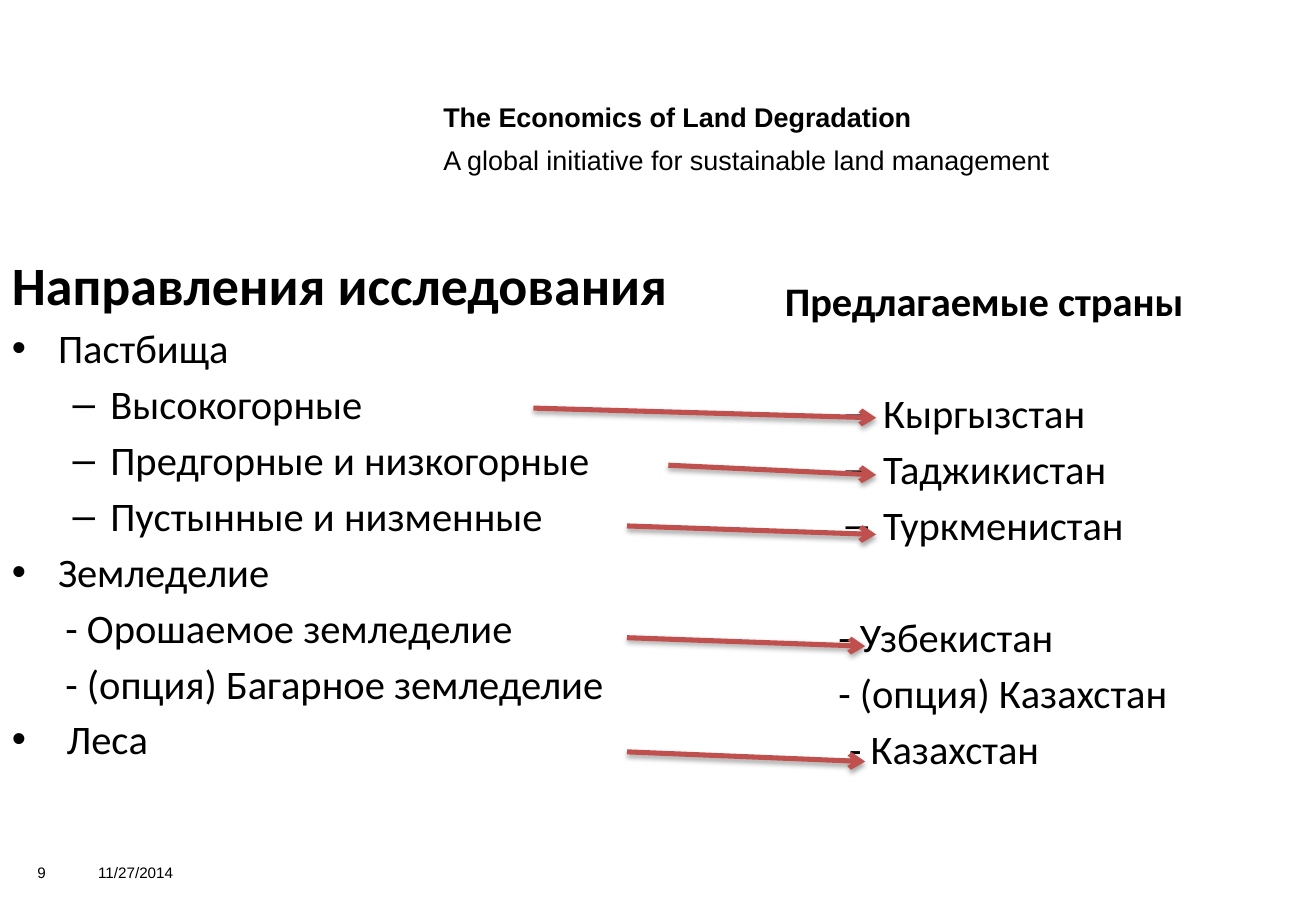
from dataclasses import dataclass

from lxml.etree import SubElement
from pptx import Presentation
from pptx.dml.color import RGBColor
from pptx.enum.shapes import MSO_CONNECTOR
from pptx.oxml.ns import qn
from pptx.slide import Slide
from pptx.util import Inches, Pt


@dataclass(frozen=True)
class Theme:
    text: RGBColor = RGBColor(0, 0, 0)
    arrow: RGBColor = RGBColor(0xC0, 0x50, 0x4D)
    shadow: str = "000000"
    body_font: str = "Calibri"
    frame_font: str = "Arial"
    title: float = 32
    body: float = 24
    header: float = 16
    footer: float = 9
    gap: float = 4.3
    skipped_line: float = 37.9
    arrow_width: float = 3


@dataclass(frozen=True)
class Line:
    text: str
    size: float
    font: str = "Calibri"
    bold: bool = False
    level: int = 0
    margin: float = 0
    indent: float = 0
    bullet: str = ""
    before: float = 0
    after: float = 0
    spacing: float = 1
    tab: float = 0


@dataclass(frozen=True)
class TextBlock:
    left: float
    top: float
    width: float
    height: float
    lines: tuple[Line, ...]


@dataclass(frozen=True)
class Arrow:
    left: float
    top: float
    right: float
    bottom: float


THEME = Theme()


def topic(text: str, margin: float = 0.38) -> Line:
    return Line(text, THEME.body, margin=margin, indent=-margin, bullet="•", before=THEME.gap)


def dashed(text: str, before: float = THEME.gap) -> Line:
    return Line(text, THEME.body, level=1, margin=0.81, indent=-0.31, bullet="–", before=before)


def option(text: str, before: float = THEME.gap, margin: float = 0.44) -> Line:
    return Line(text, THEME.body, level=2, margin=margin, before=before)


FOOTER = TextBlock(0.21, 7.06, 5.03, 0.25, (
    Line("9\t11/27/2014", THEME.footer, THEME.frame_font, tab=1),
))
HEADER = TextBlock(3.55, 0.78, 7.63, 0.72, (
    Line("The Economics of Land Degradation", THEME.header, THEME.frame_font, bold=True, after=6),
    Line("A global initiative for sustainable land management", THEME.header, THEME.frame_font, after=6),
))
DIRECTIONS = TextBlock(0, 2.02, 6.53, 4.63, (
    Line("Направления исследования", THEME.title, THEME.body_font, bold=True),
    topic("Пастбища"),
    dashed("Высокогорные"),
    dashed("Предгорные и низкогорные"),
    dashed("Пустынные и низменные"),
    topic("Земледелие"),
    option("- Орошаемое земледелие"),
    option("- (опция) Багарное земледелие"),
    topic("Леса", margin=0.45),
))
COUNTRIES = TextBlock(6.36, 2.02, 4.48, 4.63, (
    Line("Предлагаемые страны", THEME.body, THEME.body_font, bold=True, spacing=1.5),
    dashed("Кыргызстан", before=THEME.skipped_line),
    dashed("Таджикистан"),
    dashed("Туркменистан"),
    option("- Узбекистан", before=THEME.skipped_line),
    option("- (опция) Казахстан"),
    option("- Казахстан", margin=0.53),
))
ARROWS = (
    Arrow(4.39, 3.36, 7.21, 3.44),
    Arrow(5.5, 3.83, 7.21, 3.91),
    Arrow(5.16, 4.33, 7.21, 4.4),
    Arrow(5.16, 5.25, 7.12, 5.32),
    Arrow(5.16, 6.19, 7.12, 6.27),
)


def draw_text(page: Slide, block: TextBlock) -> None:
    box = page.shapes.add_textbox(
        Inches(block.left), Inches(block.top), Inches(block.width), Inches(block.height)
    )
    frame = box.text_frame
    frame.word_wrap = True
    for index, line in enumerate(block.lines):
        para = frame.add_paragraph() if index else frame.paragraphs[0]
        para.level = line.level
        para.line_spacing = line.spacing
        para.space_before = Pt(line.before)
        para.space_after = Pt(line.after)
        properties = para._p.get_or_add_pPr()
        properties.set("marL", str(Inches(line.margin)))
        properties.set("indent", str(Inches(line.indent)))
        if line.bullet:
            SubElement(properties, qn("a:buFont"), typeface=THEME.frame_font)
            SubElement(properties, qn("a:buChar"), char=line.bullet)
        else:
            SubElement(properties, qn("a:buNone"))
        if line.tab:
            tabs = SubElement(properties, qn("a:tabLst"))
            SubElement(tabs, qn("a:tab"), pos=str(Inches(line.tab)), algn="l")
        span = para.add_run()
        span.text = line.text
        span.font.name = line.font
        span.font.size = Pt(line.size)
        span.font.bold = line.bold
        span.font.color.rgb = THEME.text


def draw_arrow(page: Slide, arrow: Arrow) -> None:
    connector = page.shapes.add_connector(
        MSO_CONNECTOR.STRAIGHT,
        Inches(arrow.left), Inches(arrow.top), Inches(arrow.right), Inches(arrow.bottom),
    )
    connector.line.color.rgb = THEME.arrow
    connector.line.width = Pt(THEME.arrow_width)
    properties = connector._element.spPr
    SubElement(properties.find(qn("a:ln")), qn("a:tailEnd"), type="arrow")
    effects = SubElement(properties, qn("a:effectLst"))
    shadow = SubElement(
        effects, qn("a:outerShdw"),
        blurRad=str(Pt(3.1)), dist=str(Pt(1.8)), dir="5400000", rotWithShape="0",
    )
    color = SubElement(shadow, qn("a:srgbClr"), val=THEME.shadow)
    SubElement(color, qn("a:alpha"), val="35000")


def main() -> None:
    deck = Presentation()
    deck.slide_width = Inches(10.83)
    deck.slide_height = Inches(7.5)
    page = deck.slides.add_slide(deck.slide_layouts[6])
    for block in (FOOTER, HEADER, DIRECTIONS, COUNTRIES):
        draw_text(page, block)
    for arrow in ARROWS:
        draw_arrow(page, arrow)
    deck.save("out.pptx")


if __name__ == "__main__":
    main()
